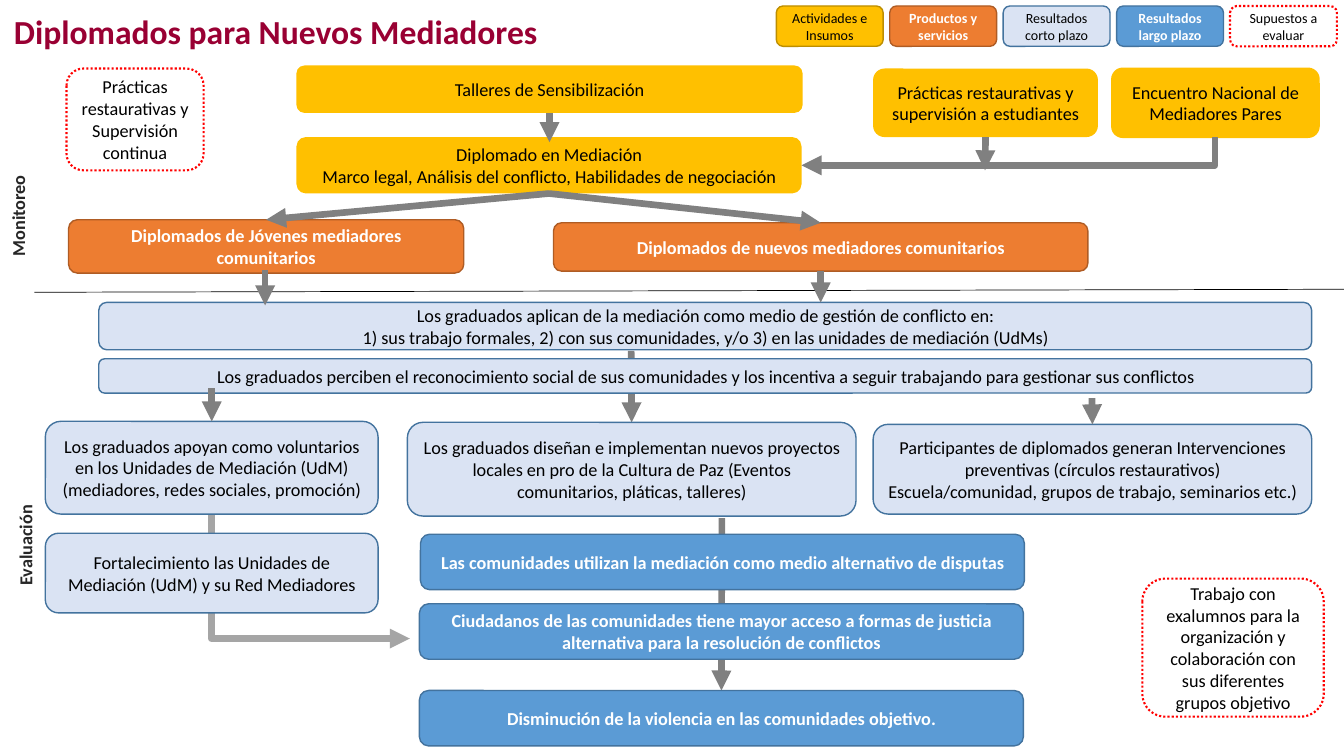
"""Builds the results-chain slide for the new mediators diploma programme."""
import pptx
import pptx.dml.color
import pptx.enum.dml
import pptx.enum.shapes
import pptx.enum.text
import pptx.oxml
import pptx.oxml.ns
import pptx.util

THEME = {
    "font": "Calibri",
    "title_size": 24, "body_size": 13, "key_size": 10,
    "title": "990033", "label": "262626", "paper": "FFFFFF", "ink": "000000",
    "arrow": "808080", "pale_arrow": "A5A5A5", "arrow_width": 4.75, "divider_width": 0.5,
    "activity": {"fill": "FFC000", "line": None, "text": "000000", "bold": False},
    "activity_key": {"fill": "FFC000", "line": "BD8E00", "text": "000000", "bold": False},
    "product": {"fill": "ED7D31", "line": "AF5C24", "text": "FFFFFF", "bold": True},
    "short_term": {"fill": "DAE3F3", "line": "43739E", "text": "000000", "bold": False},
    "long_term": {"fill": "5B9BD5", "line": "43739E", "text": "FFFFFF", "bold": True},
    "assumption": {"fill": "FFFFFF", "line": "FF0000", "text": "000000", "bold": False},
}
RECTANGLE = pptx.enum.shapes.MSO_SHAPE.RECTANGLE
ROUNDED = pptx.enum.shapes.MSO_SHAPE.ROUNDED_RECTANGLE
STRAIGHT = pptx.enum.shapes.MSO_CONNECTOR.STRAIGHT
ELBOW = pptx.enum.shapes.MSO_CONNECTOR.ELBOW
TOP, BOTTOM = 0, 2

presentation = pptx.Presentation()
presentation.slide_width = pptx.util.Inches(13.33)
presentation.slide_height = pptx.util.Inches(7.5)
slide = presentation.slides.add_slide(presentation.slide_layouts[6])
cell = presentation.slide_height / 75


def write_text(shape, text, size, color, bold=False, align="CENTER", anchor="MIDDLE"):
    frame = shape.text_frame
    frame.word_wrap = True
    frame.vertical_anchor = pptx.enum.text.MSO_ANCHOR[anchor]
    frame.text = text
    for paragraph in frame.paragraphs:
        paragraph.alignment = pptx.enum.text.PP_ALIGN[align]
        font = paragraph.runs[0].font
        font.name, font.size, font.bold = THEME["font"], pptx.util.Pt(size), bold
        font.color.rgb = pptx.dml.color.RGBColor.from_string(color)


def add_line(kind, points, color, width, arrow=True, behind=False):
    connector = slide.shapes.add_connector(kind, *[round(point * cell) for point in points])
    connector.line.color.rgb = pptx.dml.color.RGBColor.from_string(color)
    connector.line.width = pptx.util.Pt(width)
    properties = connector.element.spPr
    if arrow:
        tail = pptx.oxml.parse_xml('<a:tailEnd %s type="triangle"/>' % pptx.oxml.ns.nsdecls("a"))
        connector.line._get_or_add_ln().append(tail)
    properties.append(pptx.oxml.parse_xml("<a:effectLst %s/>" % pptx.oxml.ns.nsdecls("a")))
    if behind:
        connector.element.getparent().insert(2, connector.element)
    return connector


boxes = [
    ("diploma", "activity", 29.4, 13.6, 50.1, 5.6,
     "Diplomado en Mediación\nMarco legal, Análisis del conflicto, Habilidades de negociación"),
    ("practices", "activity", 86.6, 6.8, 22.3, 6.8,
     "Prácticas restaurativas y supervisión a estudiantes"),
    ("meeting", "activity", 110.2, 6.7, 20.7, 7, "Encuentro Nacional de Mediadores Pares"),
    ("workshops", "activity", 29.4, 6.5, 50.2, 4.7, "Talleres de Sensibilización"),
    ("alumni", "assumption", 113.3, 57.4, 18, 13.7,
     "Trabajo con exalumnos para la organización y colaboración con sus diferentes grupos objetivo"),
    ("supervision", "assumption", 6.6, 6.8, 13.6, 10.1,
     "Prácticas restaurativas y Supervisión continua"),
    ("young", "product", 6.8, 21.8, 39.2, 5.3, "Diplomados de Jóvenes mediadores comunitarios"),
    ("new", "product", 54.9, 22.1, 53, 4.8, "Diplomados de nuevos mediadores comunitarios"),
    ("apply", "short_term", 9.8, 30, 120.3, 4.7,
     "Los graduados aplican de la mediación como medio de gestión de conflicto en:\n"
     "1) sus trabajo formales, 2) con sus comunidades, y/o 3) en las unidades de mediación (UdMs)"),
    ("recognition", "short_term", 9.8, 35.6, 120.3, 3.4,
     "Los graduados perciben el reconocimiento social de sus comunidades y los incentiva "
     "a seguir trabajando para gestionar sus conflictos"),
    ("volunteers", "short_term", 4.5, 41.8, 33, 9.2,
     "Los graduados apoyan como voluntarios en los Unidades de Mediación (UdM) "
     "(mediadores, redes sociales, promoción)"),
    ("projects", "short_term", 40.4, 41.9, 44.5, 9.3,
     "Los graduados diseñan e implementan nuevos proyectos locales en pro de la "
     "Cultura de Paz (Eventos comunitarios, pláticas, talleres)"),
    ("interventions", "short_term", 86.6, 42.1, 43.5, 8.9,
     "Participantes de diplomados generan Intervenciones preventivas (círculos restaurativos)\n"
     "Escuela/comunidad, grupos de trabajo, seminarios etc.)"),
    ("strengthening", "short_term", 4.5, 52.9, 33, 7.9,
     "Fortalecimiento las Unidades de Mediación (UdM) y su Red Mediadores"),
    ("disputes", "long_term", 41.7, 53, 59.9, 5.5,
     "Las comunidades utilizan la mediación como medio alternativo de disputas"),
    ("access", "long_term", 41.6, 59.9, 59.9, 5.5,
     "Ciudadanos de las comunidades tiene mayor acceso a formas de justicia alternativa "
     "para la resolución de conflictos"),
    ("violence", "long_term", 41.6, 68.5, 59.9, 5.5,
     "Disminución de la violencia en las comunidades objetivo."),
]
key = [
    ("activity_key", "Actividades e Insumos"),
    ("product", "Productos y servicios"),
    ("short_term", "Resultados corto plazo"),
    ("long_term", "Resultados largo plazo"),
    ("assumption", "Supuestos a evaluar"),
]
key_boxes = [(text, style, 77 + 11.25 * index, 0.6, 10.6, 4, text)
             for index, (style, text) in enumerate(key)]

placed = {}
for group, size in ((boxes, THEME["body_size"]), (key_boxes, THEME["key_size"])):
    for name, style_name, left, top, width, height, text in group:
        style = THEME[style_name]
        shape = slide.shapes.add_shape(
            ROUNDED, *[round(length * cell) for length in (left, top, width, height)])
        shape.shadow.inherit = False
        shape.fill.solid()
        shape.fill.fore_color.rgb = pptx.dml.color.RGBColor.from_string(style["fill"])
        if style["line"]:
            shape.line.color.rgb = pptx.dml.color.RGBColor.from_string(style["line"])
            shape.line.width = pptx.util.Pt(1)
        else:
            shape.line.fill.background()
        if style_name == "assumption":
            shape.line.width = pptx.util.Pt(1.5)
            shape.line.dash_style = pptx.enum.dml.MSO_LINE.ROUND_DOT
        write_text(shape, text, size, style["text"], style["bold"])
        placed[name] = shape

title = slide.shapes.add_textbox(*[round(length * cell) for length in (0.4, 0.6, 54.2, 5)])
write_text(title, "Diplomados para Nuevos Mediadores", THEME["title_size"], THEME["title"],
           bold=True, align="LEFT", anchor="TOP")

for text, left, top in (("Monitoreo", -6.1, 19.8), ("Evaluación", -5.4, 52.5)):
    label = slide.shapes.add_shape(
        RECTANGLE, *[round(length * cell) for length in (left, top, 15.8, 3.2)])
    label.rotation = 270
    label.shadow.inherit = False
    label.fill.solid()
    label.fill.fore_color.rgb = pptx.dml.color.RGBColor.from_string(THEME["paper"])
    label.line.fill.background()
    write_text(label, text, THEME["body_size"], THEME["label"], bold=True, anchor="TOP")

add_line(STRAIGHT, (0.9, 29, 133.3, 28.7), THEME["ink"], THEME["divider_width"],
         arrow=False, behind=True)

arrows = [
    ((62.6, 34.8, 62.6, 41.9), None, "projects", True),
    ((71.6, 51.4, 71.6, 68.5), None, "violence", True),
    ((54.5, 11.2, 54.5, 14.1), "workshops", None, False),
    ((97.7, 13.6, 97.7, 16.9), "practices", None, False),
    ((54.5, 19.2, 26.4, 21.8), "diploma", "young", False),
    ((54.5, 19.2, 81.4, 22.1), "diploma", "new", False),
    ((26.3, 26.8, 26.3, 30.3), None, None, False),
    ((81.4, 26.9, 81.4, 30), "new", None, False),
    ((21, 38.5, 21, 41.8), None, "volunteers", False),
    ((108.3, 39.5, 108.3, 42.1), None, "interventions", False),
]
for points, source, target, behind in arrows:
    connector = add_line(STRAIGHT, points, THEME["arrow"], THEME["arrow_width"], behind=behind)
    if source:
        connector.begin_connect(placed[source], BOTTOM)
    if target:
        connector.end_connect(placed[target], TOP)

elbows = [
    ((24.6, 47.3, 37, 67), "pale_arrow", 270, True),
    ((98.6, -5.5, 101.4, 35.5), "arrow", 90, False),
]
for points, color, angle, mirrored in elbows:
    connector = add_line(ELBOW, points, THEME[color], THEME["arrow_width"], behind=mirrored)
    properties = connector.element.spPr
    properties.prstGeom.set("prst", "bentConnector2")
    properties.xfrm.set("rot", str(angle * 60000))
    properties.xfrm.set("flipH", str(int(mirrored)))

presentation.save("out.pptx")
